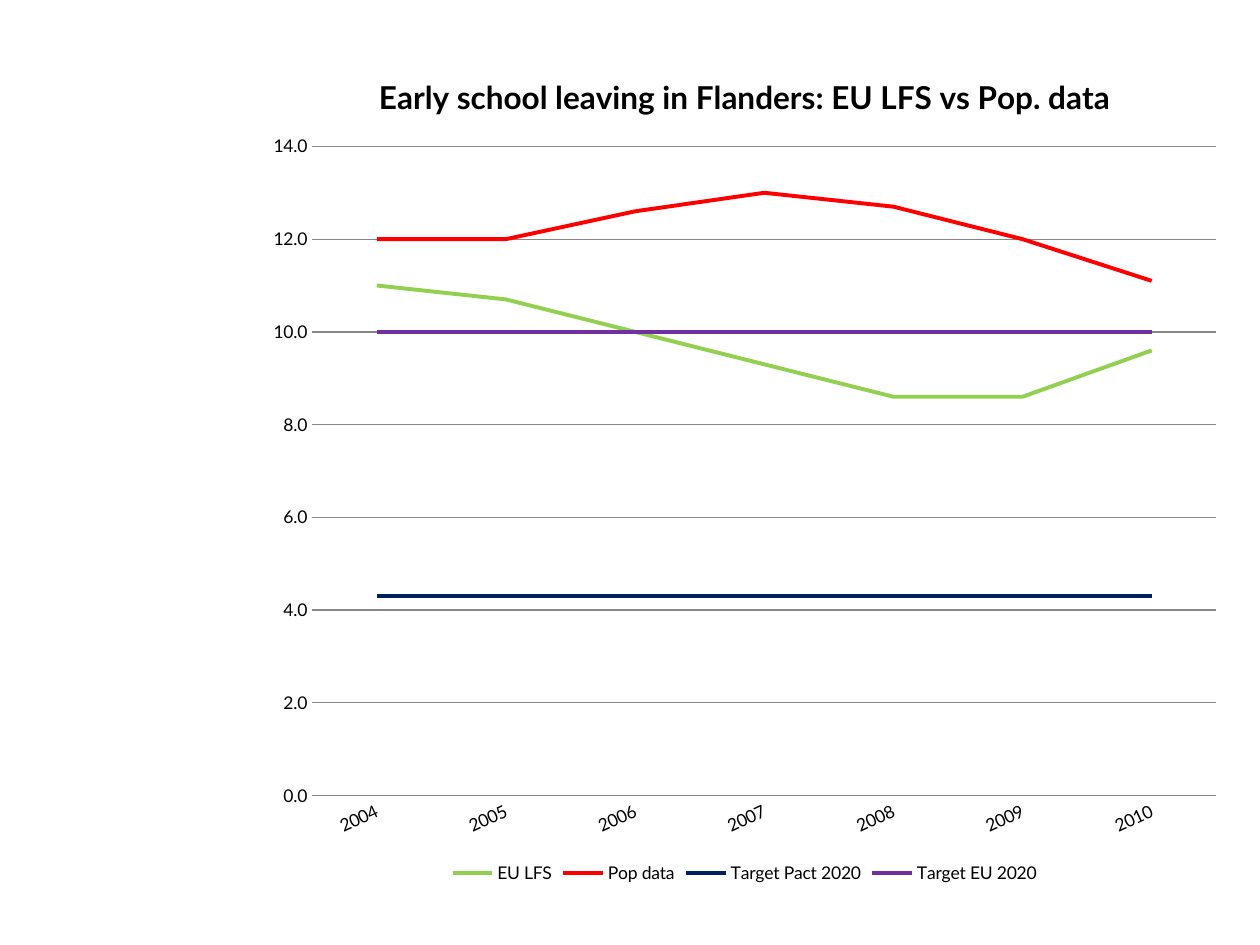
from dataclasses import dataclass

from lxml.etree import SubElement
from pptx import Presentation
from pptx.chart.data import CategoryChartData
from pptx.dml.color import RGBColor
from pptx.enum.chart import XL_CHART_TYPE, XL_LEGEND_POSITION, XL_MARKER_STYLE, XL_TICK_MARK
from pptx.oxml.ns import qn
from pptx.util import Inches, Pt


@dataclass(frozen=True)
class Theme:
    font: str = "Lato"
    text: RGBColor = RGBColor(0, 0, 0)
    grid: RGBColor = RGBColor(0x86, 0x86, 0x86)
    title_size: Pt = Pt(18)
    label_size: Pt = Pt(10)
    line_width: Pt = Pt(2.25)
    grid_width: Pt = Pt(0.75)


THEME = Theme()
TITLE = "Early school leaving in Flanders: EU LFS vs Pop. data"
YEARS = [str(year) for year in range(2004, 2011)]
SERIES = [
    ("EU LFS", [11, 10.7, 10, 9.3, 8.6, 8.6, 9.6], "92D050"),
    ("Pop data", [12, 12, 12.6, 13, 12.7, 12, 11.1], "FF0000"),
    ("Target Pact 2020", [4.3] * len(YEARS), "002060"),
    ("Target EU 2020", [10] * len(YEARS), "7030A0"),
]


def style_font(font, size, bold=False):
    font.name = THEME.font
    font.size = size
    font.bold = bold
    font.color.rgb = THEME.text


def style_line(line, color, width):
    line.color.rgb = color
    line.width = width


def place_plot(chart, x, y, w, h):
    """Fix the inner plot area, in fractions of the chart."""
    plot_area = chart._chartSpace.chart.plotArea
    layout = plot_area.find(qn("c:layout"))
    if layout is None:
        layout = SubElement(plot_area, qn("c:layout"))
        plot_area.insert(0, layout)
    manual = SubElement(layout, qn("c:manualLayout"))
    settings = [("layoutTarget", "inner"), ("xMode", "edge"), ("yMode", "edge"),
                ("x", x), ("y", y), ("w", w), ("h", h)]
    for name, value in settings:
        SubElement(manual, qn(f"c:{name}")).set("val", str(value))


def style_axes(chart):
    category, value = chart.category_axis, chart.value_axis
    for axis in (category, value):
        axis.major_tick_mark = axis.minor_tick_mark = XL_TICK_MARK.NONE
        style_font(axis.tick_labels.font, THEME.label_size)
    style_line(category.format.line, THEME.grid, THEME.grid_width)
    category._element.txPr.bodyPr.set("rot", str(-25 * 60000))

    value.minimum_scale, value.maximum_scale, value.major_unit = 0, 14, 2
    value.format.line.fill.background()
    value.has_major_gridlines = True
    style_line(value.major_gridlines.format.line, THEME.grid, THEME.grid_width)
    value.tick_labels.number_format = "0.0"
    value.tick_labels.number_format_is_linked = False


def add_leaving_chart(slide, left, top, width, height):
    data = CategoryChartData(number_format="0.0")
    data.categories = YEARS
    for name, values, _ in SERIES:
        data.add_series(name, values)
    chart = slide.shapes.add_chart(
        XL_CHART_TYPE.LINE, left, top, width, height, data).chart
    style_font(chart.font, THEME.label_size)

    chart.has_title = True
    tf = chart.chart_title.text_frame
    tf.text = TITLE
    style_font(tf.paragraphs[0].runs[0].font, THEME.title_size, bold=True)
    chart.chart_title.include_in_layout = False

    chart.has_legend = True
    chart.legend.position = XL_LEGEND_POSITION.BOTTOM
    chart.legend.include_in_layout = False
    style_font(chart.legend.font, THEME.label_size)

    chart.plots[0].vary_by_categories = False
    for series, (_, _, color) in zip(chart.plots[0].series, SERIES):
        series.smooth = False
        series.marker.style = XL_MARKER_STYLE.NONE
        style_line(series.format.line, RGBColor.from_string(color), THEME.line_width)
    style_axes(chart)
    place_plot(chart, 0.06, 0.12, 0.92, 0.77)


def main():
    prs = Presentation()
    prs.slide_width, prs.slide_height = Inches(10), Inches(7.5)
    slide = prs.slides.add_slide(prs.slide_layouts[6])
    add_leaving_chart(slide, Inches(2.01), Inches(0.36), Inches(7.8), Inches(6.69))
    prs.save("out.pptx")


if __name__ == "__main__":
    main()
